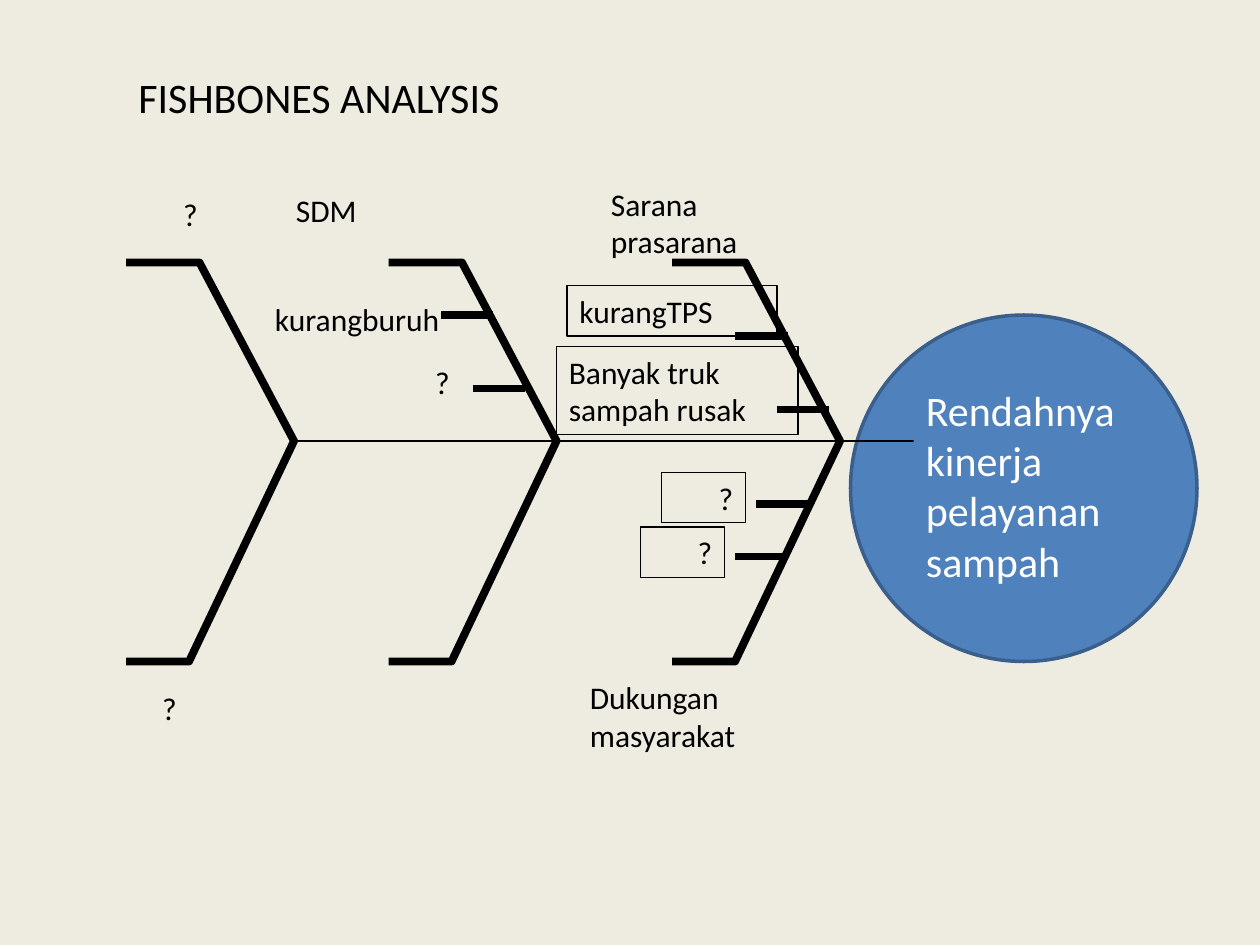
import pptx
import pptx.util
import pptx.dml.color
import pptx.enum.shapes
import pptx.enum.text
import pptx.oxml.ns
from lxml import etree

CELL = pptx.util.Inches(1) // 12  # the slide is 120 columns by 90 rows
BLACK, BLUE, WHITE = "000000", "4F81BD", "FFFFFF"
SHAPE = pptx.enum.shapes.MSO_SHAPE

BONES = [12, 37, 64]
RIB = [(0, 25), (7, 25), (16, 42), (6, 63), (0, 63)]
TWIGS = [(42, 30), (45, 37), (70, 32), (74, 39), (72, 48), (70, 53)]

# text, column, row, columns wide, rows high
LABELS = [
    ("Sarana prasarana", 57, 17, 20, 8.4),
    ("Dukungan masyarakat", 55, 64, 19, 8.4),
    ("SDM", 27, 17.6, 20, 4.8),
    ("kurangburuh", 25, 28, 20, 4.8),
    ("?", 36, 34, 8, 4.8),
    ("?", 12, 18, 8, 4.8),
    ("?", 10, 65, 8, 4.8),
]
BOXES = [
    ("kurangTPS", 54, 27.2, 20, 4.8),
    ("Banyak truk sampah rusak", 53, 33, 23, 8.4),
    ("?", 61, 50.2, 8, 4.8),
    ("?", 63, 45, 8, 4.8),
]


def grid(*cells):
    return [round(c * CELL) for c in cells]


def color(code):
    return pptx.dml.color.RGBColor.from_string(code)


def paint(shape, fill=None, edge=None, width=0.75):
    """Set fill and outline; None means there is none."""
    shape.shadow.inherit = False
    if fill:
        shape.fill.solid()
        shape.fill.fore_color.rgb = color(fill)
    else:
        shape.fill.background()
    if edge:
        shape.line.color.rgb = color(edge)
        shape.line.width = pptx.util.Pt(width)
    else:
        shape.line.fill.background()


def write(shape, text, size=18, ink=BLACK):
    """Fill in the text; a lone question mark goes to the right."""
    frame = shape.text_frame
    frame.word_wrap = True
    frame.auto_size = pptx.enum.text.MSO_AUTO_SIZE.SHAPE_TO_FIT_TEXT
    frame.vertical_anchor = pptx.enum.text.MSO_ANCHOR.TOP
    para = frame.paragraphs[0]
    para.text = text
    align = pptx.enum.text.PP_ALIGN
    para.alignment = align.RIGHT if text == "?" else align.LEFT
    para.font.name = "Calibri"
    para.font.size = pptx.util.Pt(size)
    para.font.color.rgb = color(ink)


def label(shapes, text, *place, size=18):
    write(shapes.add_textbox(*grid(*place)), text, size)


def box(shapes, text, *place, fill=None, edge=BLACK, size=18, ink=BLACK):
    shape = shapes.add_shape(SHAPE.RECTANGLE, *grid(*place))
    paint(shape, fill, edge)
    write(shape, text, size, ink)


def rule(shapes, col, row, span, width):
    """Draw a level line."""
    kind = pptx.enum.shapes.MSO_CONNECTOR.STRAIGHT
    line = shapes.add_connector(kind, *grid(col, row, col + span, row))
    line.line.color.rgb = color(BLACK)
    line.line.width = pptx.util.Pt(width)
    etree.SubElement(line._element.spPr, pptx.oxml.ns.qn("a:effectLst"))


def bone(shapes, col):
    points = [(col + x, y) for x, y in RIB]
    path = shapes.build_freeform(*points[0], scale=CELL)
    path.add_line_segments(points[1:], close=False)
    shape = path.convert_to_shape()
    paint(shape, edge=BLACK, width=4.5)
    edge = shape.line._get_or_add_ln()
    etree.SubElement(edge, pptx.oxml.ns.qn("a:round"))


def main():
    deck = pptx.Presentation()
    deck.slide_width, deck.slide_height = grid(120, 90)
    slide = deck.slides.add_slide(deck.slide_layouts[6])
    slide.background.fill.solid()
    slide.background.fill.fore_color.rgb = color("EEECE1")
    shapes = slide.shapes

    head = shapes.add_shape(SHAPE.OVAL, *grid(81, 30, 33, 33))
    paint(head, BLUE, "3A5F8C", 2)
    for col in BONES:
        bone(shapes, col)
    rule(shapes, 28, 42, 71, 0.75)
    box(shapes, "Rendahnya kinerja pelayanan sampah", 87, 36, 22, 20.6,
        fill=BLUE, edge=None, size=24, ink=WHITE)

    for item in BOXES:
        box(shapes, *item)
    for col, row in TWIGS:
        rule(shapes, col, row, 5, 4.5)
    for item in LABELS:
        label(shapes, *item)
    label(shapes, "FISHBONES ANALYSIS", 12, 6.2, 38, 6, size=24)

    deck.save("out.pptx")


if __name__ == "__main__":
    main()
